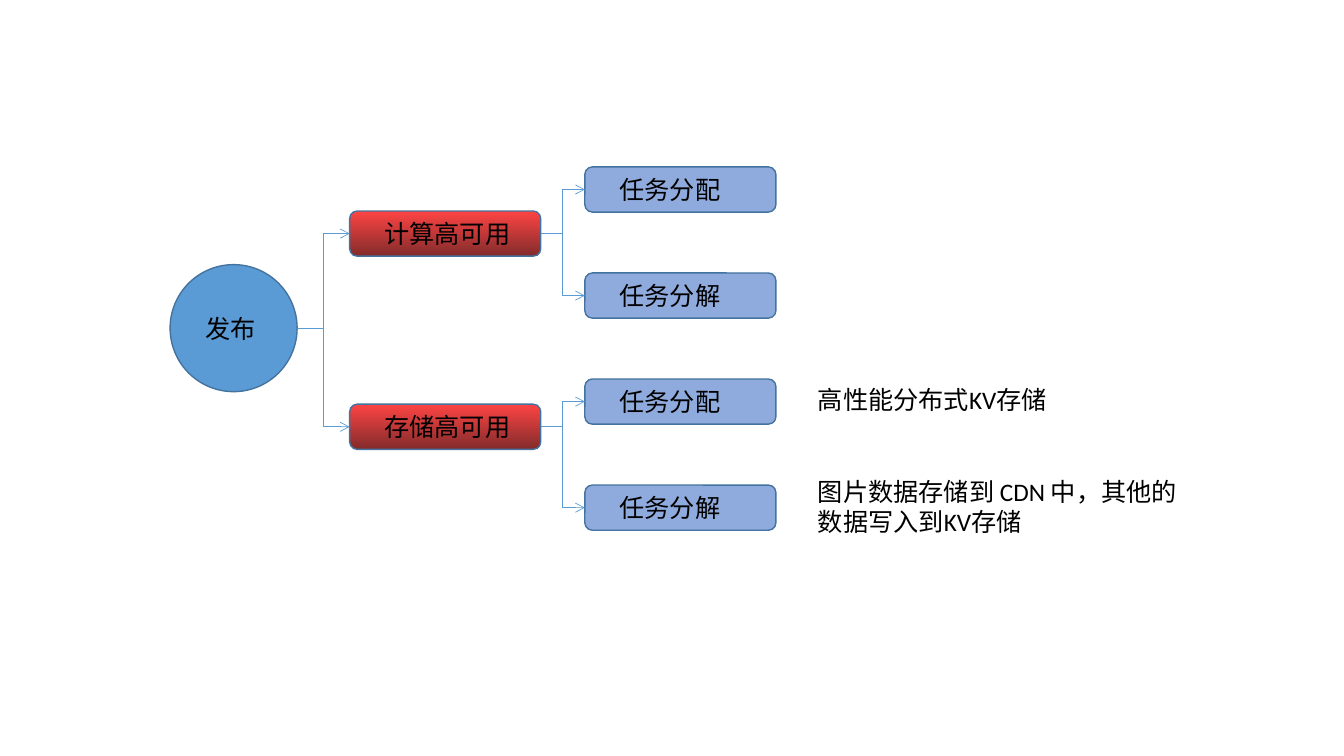
from lxml.etree import SubElement
from pptx import Presentation
from pptx.dml.color import RGBColor
from pptx.enum.shapes import MSO_CONNECTOR, MSO_SHAPE
from pptx.enum.text import MSO_ANCHOR, PP_ALIGN
from pptx.oxml.ns import qn
from pptx.util import Pt

PX = 9525  # EMU per px, 96 px to the inch
COLORS = {
    "circle": "5B9BD5",
    "outline": "43739E",
    "arrow": "5B9BD5",
    "branch_top": "FE4444",
    "branch_bottom": "832B2B",
    "leaf": "8FAADC",
    "text": "000000",
}
NODE_W, NODE_H = 182, 43
ROOT_SIZE = 121
BRANCH_X, LEAF_X, NOTE_X = 171, 395, 607  # offsets inside the tree box
LEAF_STEP = 101
BRANCHES = [
    ("计算高可用", 42, ["任务分配", "任务分解"]),
    ("存储高可用", 226, ["任务分配", "任务分解"]),
]
NOTES = [
    ("高性能分布式KV存储", 202, 38),
    ("图片数据存储到 CDN 中，其他的数据写入到KV存储", 290, 68),
]


def rgb(name):
    return RGBColor.from_string(COLORS[name])


def write(sp, text, inset, anchor):
    """Left-aligned 18 pt text that starts inset px from the edge."""
    tf = sp.text_frame
    tf.word_wrap = True
    tf.vertical_anchor = anchor
    tf.margin_left, tf.margin_right = inset * PX, 0
    p = tf.paragraphs[0]
    p.text = text
    p.alignment = PP_ALIGN.LEFT
    p.font.size = Pt(18)
    p.font.name = "Calibri"
    p.font.color.rgb = rgb("text")


def add_node(s, kind, x, y, w, h, text, inset, colors):
    """Outlined shape; two colours make a vertical gradient."""
    sp = s.shapes.add_shape(kind, x * PX, y * PX, w * PX, h * PX)
    sp.shadow.inherit = False
    if len(colors) == 1:
        sp.fill.solid()
        sp.fill.fore_color.rgb = rgb(colors[0])
    else:
        sp.fill.gradient()
        sp.fill.gradient_angle = 270
        for stop, name in zip(sp.fill.gradient_stops, colors):
            stop.color.rgb = rgb(name)
    sp.line.color.rgb = rgb("outline")
    sp.line.width = Pt(1)
    write(sp, text, inset, MSO_ANCHOR.MIDDLE)
    return sp


def add_box(s, x, y, text, colors):
    return add_node(s, MSO_SHAPE.ROUNDED_RECTANGLE, x, y, NODE_W, NODE_H, text, 31, colors)


def add_arrow(s, start, end):
    """Elbow arrow from the right side of start to the left side of end."""
    line = s.shapes.add_connector(
        MSO_CONNECTOR.ELBOW,
        start.left + start.width, start.top + start.height // 2,
        end.left, end.top + end.height // 2,
    )
    if start.auto_shape_type == MSO_SHAPE.ROUNDED_RECTANGLE:
        line.begin_connect(start, 3)
    line.end_connect(end, 1)
    line.line.color.rgb = rgb("arrow")
    line.line.width = Pt(0.5)
    SubElement(line.line._get_or_add_ln(), qn("a:tailEnd"), type="arrow")
    SubElement(line._element.spPr, qn("a:effectLst"))


def add_tree(s, x, y):
    """Root circle, two branches and their leaves."""
    root = add_node(s, MSO_SHAPE.OVAL, x, y + 93, ROOT_SIZE, ROOT_SIZE, "发布", 16, ["circle"])
    leaf_y = y
    for name, dy, leaves in BRANCHES:
        branch = add_box(s, x + BRANCH_X, y + dy, name, ["branch_top", "branch_bottom"])
        add_arrow(s, root, branch)
        for leaf_name in leaves:
            leaf = add_box(s, x + LEAF_X, leaf_y, leaf_name, ["leaf"])
            add_arrow(s, branch, leaf)
            leaf_y += LEAF_STEP


def add_notes(s, x, y, w):
    """Remarks beside the storage leaves."""
    for text, dy, h in NOTES:
        sp = s.shapes.add_textbox(x * PX, (y + dy) * PX, w * PX, h * PX)
        write(sp, text, 10, MSO_ANCHOR.TOP)


def main():
    prs = Presentation()
    prs.slide_width, prs.slide_height = 1280 * PX, 720 * PX
    s = prs.slides.add_slide(prs.slide_layouts[6])
    x, y = 162, 159
    add_tree(s, x, y)
    add_notes(s, x + NOTE_X, y, 374)
    prs.save("out.pptx")


if __name__ == "__main__":
    main()
